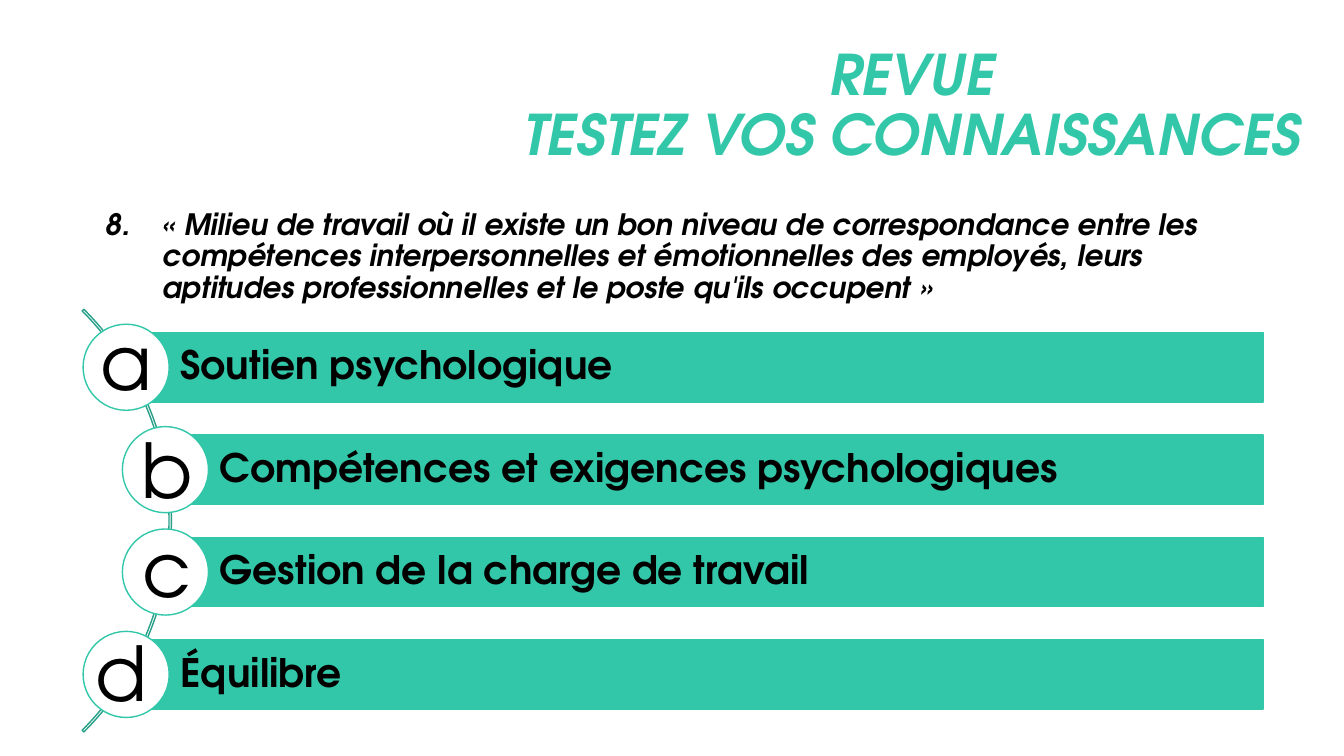
from lxml.etree import SubElement
from pptx import Presentation
from pptx.dml.color import RGBColor
from pptx.enum.shapes import MSO_SHAPE as Preset
from pptx.enum.text import MSO_ANCHOR as Anchor, MSO_AUTO_SIZE as AutoSize, PP_ALIGN as Align
from pptx.oxml.ns import qn
from pptx.util import Cm, Pt

FONT = "TeX Gyre Adventor"
GREEN, DARK_GREEN, BLACK, WHITE = "32C7A9", "289F87", "000000", "FFFFFF"


def add_text(para, text, size, color, bold=False, italic=False):
    span = para.add_run()
    span.text = text
    span.font.name, span.font.size = FONT, Pt(size)
    span.font.bold, span.font.italic = bold, italic
    span.font.color.rgb = RGBColor.from_string(color)


def add_preset(preset, left, top, width, height, line, fill=None):
    """Add a shape measured in centimetres, hollow when no fill is given."""
    shape = page.shapes.add_shape(preset, Cm(left), Cm(top), Cm(width), Cm(height))
    shape.shadow.inherit = False
    shape.line.color.rgb = RGBColor.from_string(line)
    shape.line.width = Pt(1)
    if fill:
        shape.fill.solid()
        shape.fill.fore_color.rgb = RGBColor.from_string(fill)
    else:
        shape.fill.background()
    return shape


deck = Presentation()
deck.slide_width, deck.slide_height = Cm(33.87), Cm(19.05)
page = deck.slides.add_slide(deck.slide_layouts[1])

# Title
title = page.shapes.title
title.left, title.top, title.width, title.height = Cm(9.7), Cm(0.91), Cm(26.57), Cm(3.58)
frame = title.text_frame
frame.auto_size = AutoSize.NONE
frame.vertical_anchor = Anchor.MIDDLE
para = frame.paragraphs[0]
para.alignment = Align.CENTER
para.line_spacing = 0.9
add_text(para, "REVUE", 40, GREEN, bold=True, italic=True)
para.add_line_break()
add_text(para, "TESTEZ VOS CONNAISSANCES", 40, GREEN, bold=True, italic=True)

# Numbered question
question = page.placeholders[1]
question.left, question.top, question.width, question.height = Cm(2.41), Cm(5.16), Cm(29.54), Cm(2.46)
frame = question.text_frame
frame.auto_size = AutoSize.NONE
para = frame.paragraphs[0]
properties = para._p.get_or_add_pPr()
properties.set("marL", str(Cm(1.43)))
properties.set("indent", str(Cm(-1.43)))
SubElement(properties, qn("a:buFont"), typeface=FONT)
SubElement(properties, qn("a:buAutoNum"), type="arabicPeriod", startAt="8")
para.line_spacing = 0.9
para.space_before = Pt(0)
add_text(para, "« Milieu de travail où il existe un bon niveau de correspondance entre les "
         "compétences interpersonnelles et émotionnelles des employés, leurs aptitudes "
         "professionnelles et le poste qu'ils occupent »", 21, BLACK, bold=True, italic=True)

# Arc behind the answers
arc = add_preset(Preset.BLOCK_ARC, -10.74, 5.59, 15.06, 15.06, DARK_GREEN)
for index, value in enumerate((189, 27, 0.004)):
    arc.adjustments[index] = value

# Answers: letter, text, bar left, letter centre, letter top
answers = [
    ("a", "Soutien psychologique", 3.18, 3.18, 7.82),
    ("b", "Compétences et exigences psychologiques", 4.17, 4.22, 10.52),
    ("c", "Gestion de la charge de travail", 4.17, 4.2, 13.03),
    ("d", "Équilibre", 3.18, 3.07, 15.65),
]
BAR_TOP, BAR_STEP, BAR_RIGHT, BAR_HEIGHT = 8.38, 2.58, 31.83, 1.75
DIAMETER = 2.17
LETTER_WIDTH, LETTER_HEIGHT = 1.83, 2.57

for row, (letter, answer, left, letter_center, letter_top) in enumerate(answers):
    top = BAR_TOP + row * BAR_STEP
    bar = add_preset(Preset.RECTANGLE, left, top, BAR_RIGHT - left, BAR_HEIGHT, GREEN, GREEN)
    frame = bar.text_frame
    frame.word_wrap = True
    frame.vertical_anchor = Anchor.MIDDLE
    frame.margin_left = Cm(1.37)
    frame.margin_top = frame.margin_right = frame.margin_bottom = Cm(0.2)
    para = frame.paragraphs[0]
    para.alignment = Align.LEFT
    para.line_spacing = 0.9
    add_text(para, answer, 28, BLACK, bold=True)

    add_preset(Preset.OVAL, left - DIAMETER / 2, top + (BAR_HEIGHT - DIAMETER) / 2,
               DIAMETER, DIAMETER, GREEN, WHITE)

    box = page.shapes.add_textbox(Cm(letter_center - LETTER_WIDTH / 2), Cm(letter_top),
                                  Cm(LETTER_WIDTH), Cm(LETTER_HEIGHT))
    box.text_frame.word_wrap = False
    box.text_frame.auto_size = AutoSize.SHAPE_TO_FIT_TEXT
    para = box.text_frame.paragraphs[0]
    para.alignment = Align.CENTER
    add_text(para, letter, 54, BLACK)

deck.save("out.pptx")
